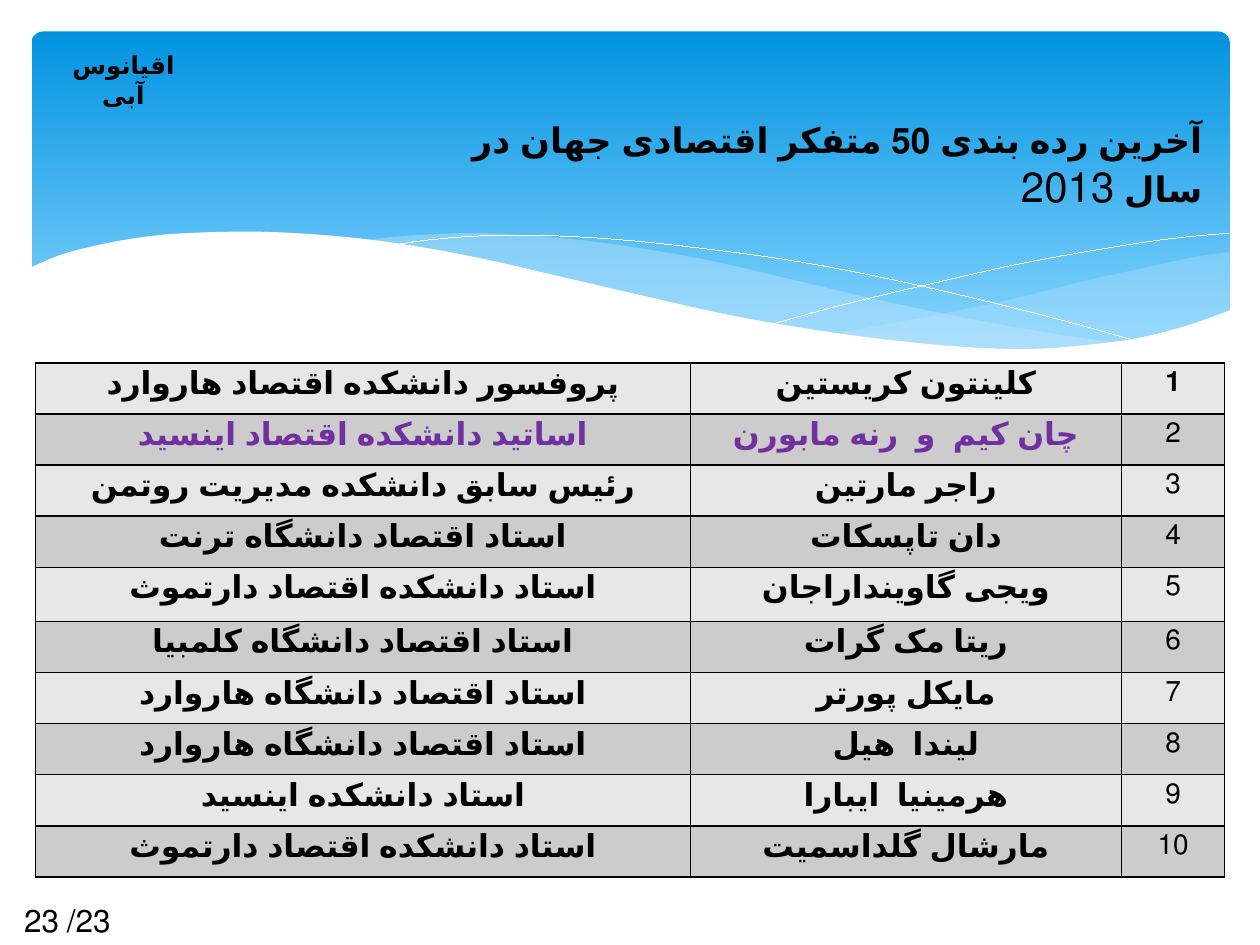
from pptx import Presentation
from pptx.dml.color import RGBColor
from pptx.enum.lang import MSO_LANGUAGE_ID
from pptx.enum.shapes import MSO_SHAPE
from pptx.enum.text import PP_ALIGN
from pptx.oxml.ns import qn
from pptx.util import Inches, Pt
from lxml.etree import SubElement

HUES = {
    "deep": "0293E0", "sky": "83D3FE", "mist": "C6E7FC", "white": "FFFFFF",
    "black": "000000", "purple": "7030A0", "light": "E7E7E7", "dark": "CCCCCC",
}

PEOPLE = [
    ("پروفسور دانشکده اقتصاد هاروارد", "کلینتون کریستین"),
    ("اساتید دانشکده اقتصاد اینسید", "چان کیم  و  رنه مابورن"),
    ("رئیس سابق دانشکده مدیریت روتمن", "راجر مارتین"),
    ("استاد اقتصاد دانشگاه ترنت", "دان تاپسکات"),
    ("استاد دانشکده اقتصاد دارتموث", "ویجی گاوینداراجان"),
    ("استاد اقتصاد دانشگاه کلمبیا", "ریتا مک گرات"),
    ("استاد اقتصاد دانشگاه هاروارد", "مایکل پورتر"),
    ("استاد اقتصاد دانشگاه هاروارد", "لیندا  هیل"),
    ("استاد دانشکده اینسید", "هرمینیا  ایبارا"),
    ("استاد دانشکده اقتصاد دارتموث", "مارشال گلداسمیت"),
]

RIGHT = [
    [(9.76, 2), (9.48, 2.04), (9.06, 2.13), (8.61, 2.23), (8.05, 2.37),
     (7.53, 2.48), (7.06, 2.57), (6.61, 2.65)],
    [(6.61, 2.65), (7.05, 2.71), (7.57, 2.76), (8.03, 2.78), (8.54, 2.76),
     (8.97, 2.7), (9.35, 2.62), (9.76, 2.47)],
]
BAND = [
    [(8.93, 2.73), (8.37, 2.65), (7.75, 2.54), (7.06, 2.4), (6.29, 2.22),
     (5.69, 2.08), (5.14, 1.98), (4.65, 1.91), (4.2, 1.87), (3.8, 1.85),
     (3.44, 1.86), (3.13, 1.88), (2.86, 1.91)],
    [(2.86, 1.91), (3.42, 1.99), (4.04, 2.11), (4.49, 2.22), (5.3, 2.4),
     (6.01, 2.55), (6.65, 2.66), (7.22, 2.74), (7.73, 2.77), (8.18, 2.78),
     (8.57, 2.77), (8.93, 2.73)],
]
FALL = [[(3.09, 1.95), (3.44, 1.9), (3.87, 1.87), (4.33, 1.87), (4.89, 1.9),
         (5.56, 1.97), (6.36, 2.08), (7.27, 2.26), (8.31, 2.51), (9.07, 2.72)]]
RISE = [[(6.13, 2.57), (6.72, 2.41), (7.48, 2.23), (8.06, 2.1), (8.66, 1.99),
         (9.24, 1.9), (9.75, 1.85)]]
FRONT = [
    [(9.77, 2.46), (9.4, 2.59), (8.99, 2.69), (8.5, 2.75), (8.09, 2.77),
     (7.61, 2.75), (7.08, 2.7), (6.48, 2.62), (5.79, 2.5), (5.03, 2.33),
     (4.47, 2.2), (3.91, 2.07), (3.4, 1.97), (2.92, 1.9), (2.5, 1.86),
     (2.11, 1.84), (1.77, 1.84), (1.32, 1.86), (0.95, 1.91), (0.67, 1.97),
     (0.46, 2.03), (0.23, 2.13)],
    [(0.23, 3.29), (9.77, 3.29)],
]


def smooth(knots, steps=5):
    ring = [knots[0], *knots, knots[-1]]
    out = [knots[0]]
    for a, b, c, d in zip(ring, ring[1:], ring[2:], ring[3:]):
        for i in range(1, steps + 1):
            t = i / steps
            out.append(tuple(
                q + t * (r - p) / 2
                + t * t * (2 * p - 5 * q + 4 * r - s) / 2
                + t ** 3 * (3 * q - p - 3 * r + s) / 2
                for p, q, r, s in zip(a, b, c, d)))
    return out


class Deck:
    font = "Cambria"

    def __init__(self, slide):
        self.slide = slide

    def hue(self, name):
        return RGBColor.from_string(HUES[name])

    def style(self, run, size, bold=False, color="black"):
        font = run.font
        font.name, font.size, font.bold = self.font, Pt(size), bold
        font.language_id = MSO_LANGUAGE_ID.FARSI
        font.color.rgb = self.hue(color)

    def align(self, para, side=PP_ALIGN.CENTER):
        para.alignment = side
        para._p.get_or_add_pPr().set("rtl", "1")

    def panel(self, x, y, w, h):
        shape = self.slide.shapes.add_shape(
            MSO_SHAPE.ROUNDED_RECTANGLE, Inches(x), Inches(y), Inches(w), Inches(h))
        shape.adjustments[0] = 0.034
        shape.shadow.inherit = False
        shape.line.fill.background()
        shape.fill.gradient()
        shape.fill.gradient_angle = 270
        for stop, name, spot in zip(shape.fill.gradient_stops, ("deep", "sky"), (0, 0.9)):
            stop.color.rgb = self.hue(name)
            stop.position = spot

    def wave(self, edges, fill=None, alpha=100):
        first, *rest = [(Inches(x), Inches(y)) for edge in edges for x, y in smooth(edge)]
        path = self.slide.shapes.build_freeform(*first)
        path.add_line_segments(rest, close=fill is not None)
        shape = path.convert_to_shape()
        shape.shadow.inherit = False
        if fill is None:
            shape.fill.background()
            shape.line.color.rgb = self.hue("white")
            shape._element.spPr.find(qn("a:ln")).set("w", "0")
            return
        shape.line.fill.background()
        shape.fill.solid()
        shape.fill.fore_color.rgb = self.hue(fill)
        tint = shape.fill._xPr.find(".//" + qn("a:srgbClr"))
        SubElement(tint, qn("a:alpha"), val=str(alpha * 1000))

    def text(self, x, y, w, h, parts, side=PP_ALIGN.CENTER):
        frame = self.slide.shapes.add_textbox(
            Inches(x), Inches(y), Inches(w), Inches(h)).text_frame
        frame.word_wrap = True
        para = frame.paragraphs[0]
        self.align(para, side)
        for words, size, bold in parts:
            run = para.add_run()
            run.text = words
            self.style(run, size, bold)

    def border(self, cell):
        props = cell._tc.get_or_add_tcPr()
        for i, side in enumerate(("lnL", "lnR", "lnT", "lnB")):
            line = props.makeelement(qn("a:" + side), {"w": str(Pt(1))})
            props.insert(i, line)
            solid = SubElement(line, qn("a:solidFill"))
            SubElement(solid, qn("a:srgbClr"), val=HUES["black"])

    def cell(self, cell, words, size, bold, color, fill):
        cell.text_frame.text = words
        para = cell.text_frame.paragraphs[0]
        self.align(para)
        self.style(para.runs[0], size, bold, color)
        cell.fill.solid()
        cell.fill.fore_color.rgb = self.hue(fill)
        self.border(cell)

    def table(self, x, y, cols, rows, people):
        grid = self.slide.shapes.add_table(
            len(rows), len(cols), Inches(x), Inches(y),
            Inches(sum(cols)), Inches(sum(rows))).table
        grid.first_row = grid.horz_banding = False
        for col, width in zip(grid.columns, cols):
            col.width = Inches(width)
        for i, (post, name) in enumerate(people):
            grid.rows[i].height = Inches(rows[i])
            fill = "dark" if i % 2 else "light"
            color = "purple" if i == 1 else "black"
            self.cell(grid.cell(i, 0), post, 18, True, color, fill)
            self.cell(grid.cell(i, 1), name, 18, True, color, fill)
            self.cell(grid.cell(i, 2), str(i + 1), 16, i == 0, "black", fill)


def main():
    show = Presentation()
    show.slide_width, show.slide_height = Inches(10), Inches(7.5)
    deck = Deck(show.slides.add_slide(show.slide_layouts[6]))
    deck.panel(0.25, 0.25, 9.51, 2.7)
    deck.wave(RIGHT, "mist", 29)
    deck.wave(BAND, "mist", 40)
    deck.wave(FALL)
    deck.wave(RISE)
    deck.wave(FRONT, "white")
    deck.text(3.03, 0.89, 6.61, 0.5, [
        ("آخرین رده بندی 50 متفکر اقتصادی جهان در سال ", 20, True),
        ("2013", 24, False)], PP_ALIGN.RIGHT)
    tall = 0.43
    short = (4.08 - tall) / (len(PEOPLE) - 1)
    rows = [tall if i == 4 else short for i in range(len(PEOPLE))]
    deck.table(0.28, 2.88, [5.2, 3.42, 0.82], rows, PEOPLE)
    deck.text(0, 7.1, 1.07, 0.4, [("23/ 23", 18, False)])
    deck.text(0.35, 0.35, 1.26, 0.34, [("اقیانوس آبی", 14, True)])
    show.save("out.pptx")


if __name__ == "__main__":
    main()
